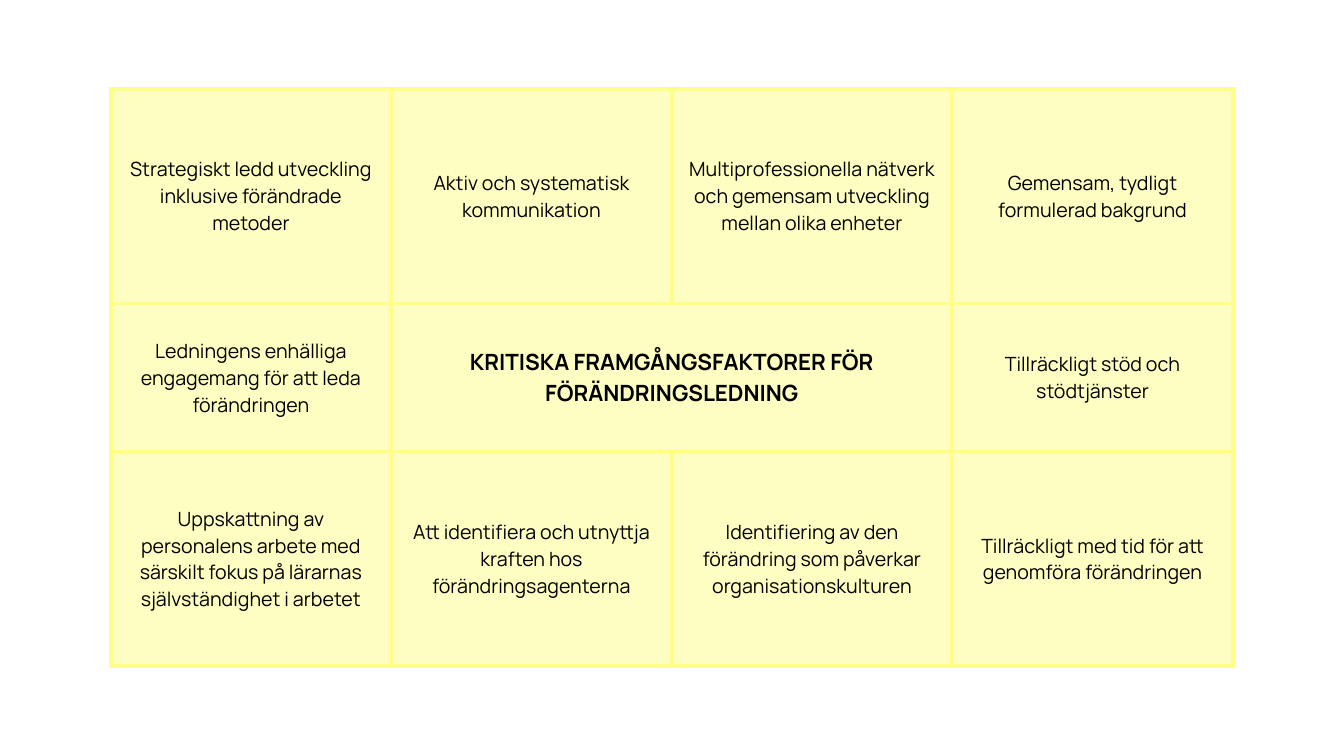
from lxml.etree import SubElement
from pptx import Presentation
from pptx.dml.color import RGBColor
from pptx.enum.text import MSO_ANCHOR as Anchor, PP_ALIGN as Align
from pptx.oxml.ns import qn
from pptx.util import Cm, Pt

FONT = "Manrope"
TEXT_COLOUR, CELL_FILL, BORDER = "000000", "FEFEC2", "FFFF87"
BORDER_WIDTH = Pt(3)
COLUMN_WIDTH = 7.07
ROW_HEIGHTS = [5.41, 3.73, 5.41]
HEADING = "KRITISKA FRAMGÅNGSFAKTORER FÖR FÖRÄNDRINGSLEDNING"

# None marks the cell covered by the merged heading
FACTORS = [
    ["Strategiskt ledd utveckling inklusive förändrade metoder",
     "Aktiv och systematisk kommunikation",
     "Multiprofessionella nätverk och gemensam utveckling mellan olika enheter",
     "Gemensam, tydligt formulerad bakgrund"],
    ["Ledningens enhälliga engagemang för att leda förändringen",
     HEADING,
     None,
     "Tillräckligt stöd och stödtjänster"],
    ["Uppskattning av personalens arbete med särskilt fokus på lärarnas "
     "självständighet i arbetet",
     "Att identifiera och utnyttja kraften hos förändringsagenterna",
     "Identifiering av den förändring som påverkar organisationskulturen",
     "Tillräckligt med tid för att genomföra förändringen"],
]


def colour(hex_string):
    return RGBColor.from_string(hex_string)


def add_borders(cell):
    properties = cell._tc.get_or_add_tcPr()
    for side in ("a:lnL", "a:lnR", "a:lnT", "a:lnB"):
        line = SubElement(properties, qn(side), w=str(BORDER_WIDTH))
        fill = SubElement(line, qn("a:solidFill"))
        SubElement(fill, qn("a:srgbClr"), val=BORDER)


# Slide
presentation = Presentation()
presentation.slide_width = Cm(33.87)
presentation.slide_height = Cm(19.05)
slide = presentation.slides.add_slide(presentation.slide_layouts[6])

# Table grid
row_count, column_count = len(FACTORS), len(FACTORS[0])
table = slide.shapes.add_table(
    row_count, column_count, Cm(2.79), Cm(2.24),
    Cm(COLUMN_WIDTH * column_count), Cm(sum(ROW_HEIGHTS))).table
table.first_row = False
table.horz_banding = False
for column in table.columns:
    column.width = Cm(COLUMN_WIDTH)
for row, height in zip(table.rows, ROW_HEIGHTS):
    row.height = Cm(height)
table.cell(1, 1).merge(table.cell(1, 2))

# Cells
for row_index, row_texts in enumerate(FACTORS):
    for column_index, text in enumerate(row_texts):
        if text is None:
            continue
        cell = table.cell(row_index, column_index)
        add_borders(cell)
        cell.fill.solid()
        cell.fill.fore_color.rgb = colour(CELL_FILL)
        cell.vertical_anchor = Anchor.MIDDLE
        paragraph = cell.text_frame.paragraphs[0]
        paragraph.alignment = Align.CENTER
        run = paragraph.add_run()
        run.text = text
        run.font.name = FONT
        run.font.size = Pt(16 if text == HEADING else 14)
        run.font.bold = text == HEADING
        run.font.color.rgb = colour(TEXT_COLOUR)

presentation.save("out.pptx")
